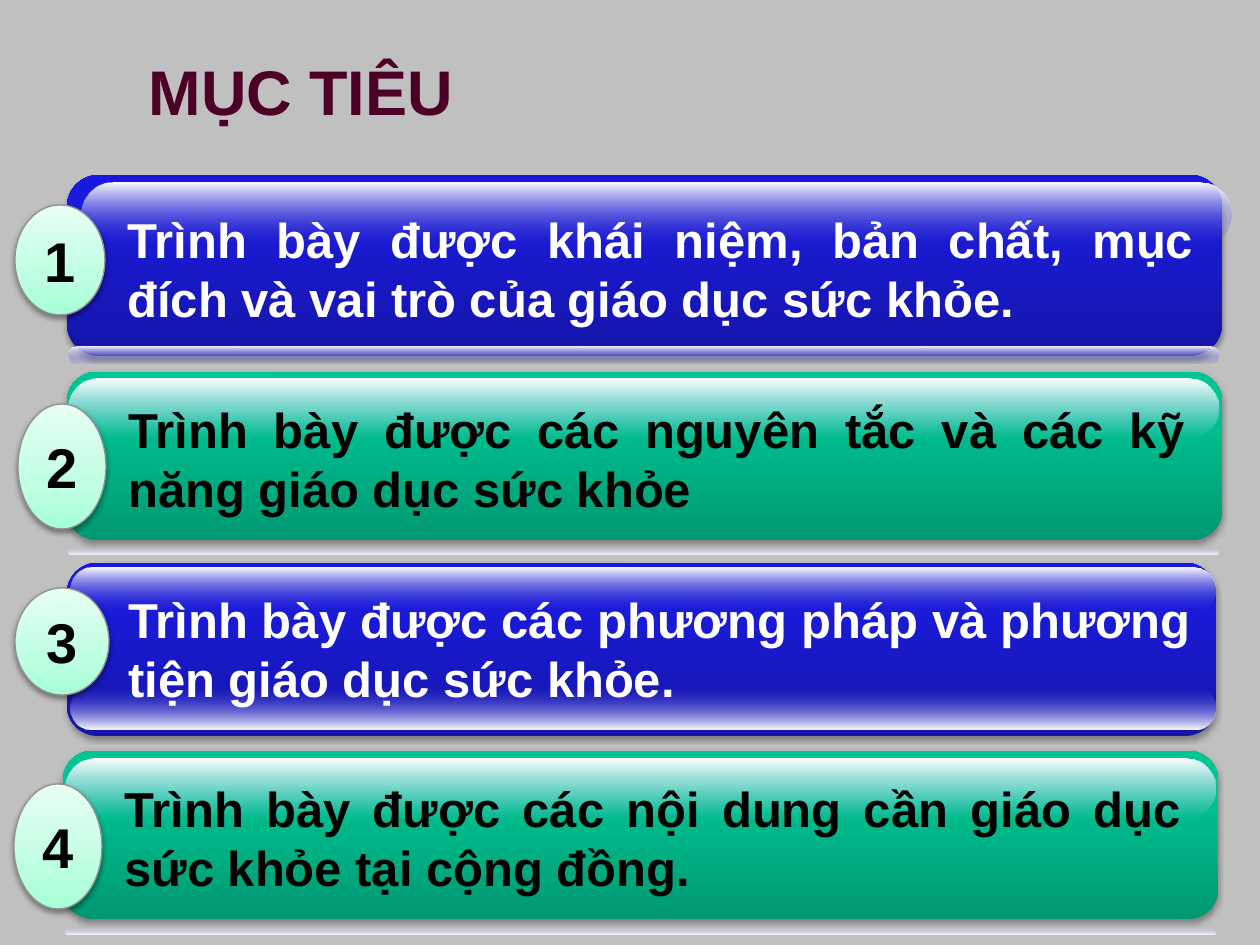
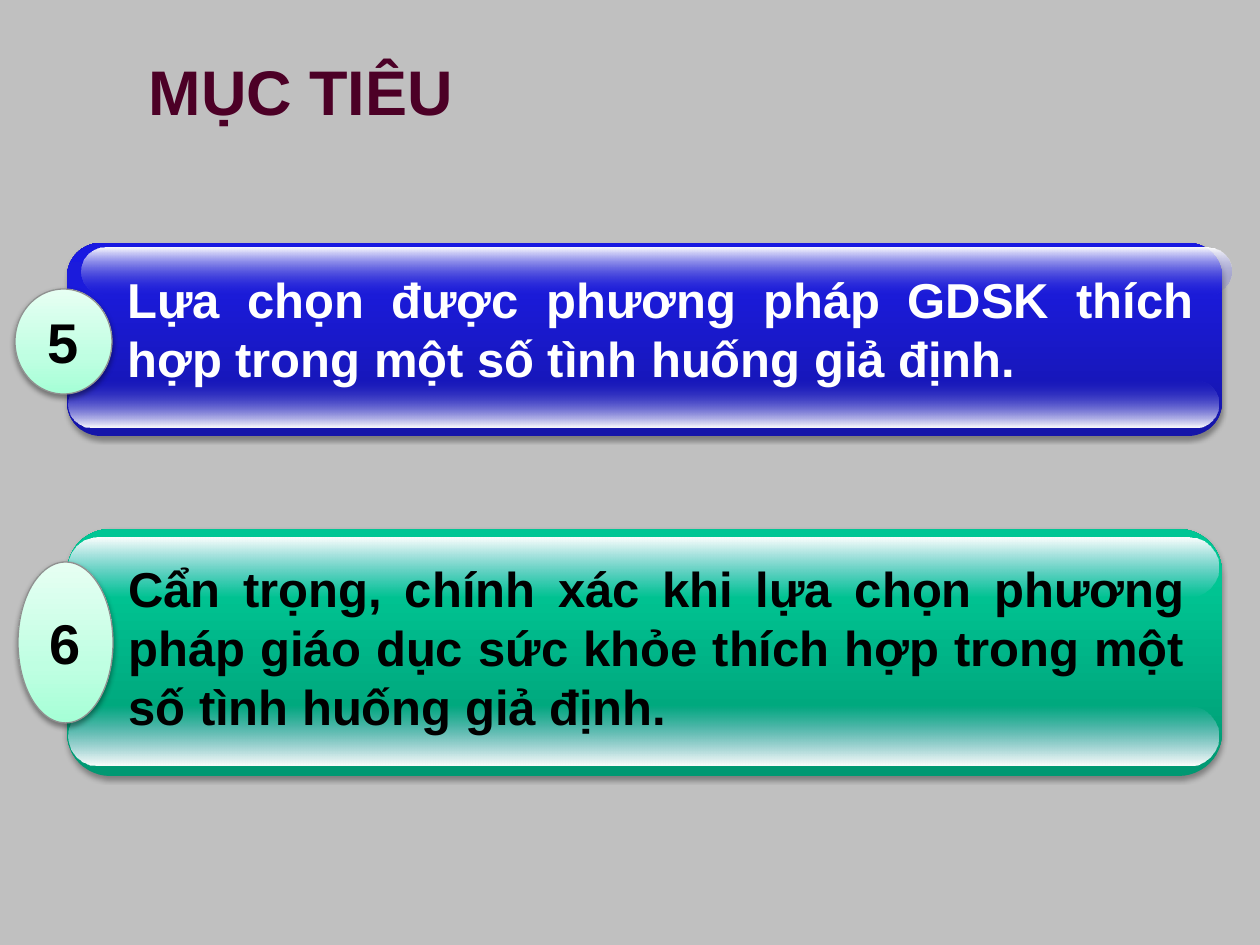
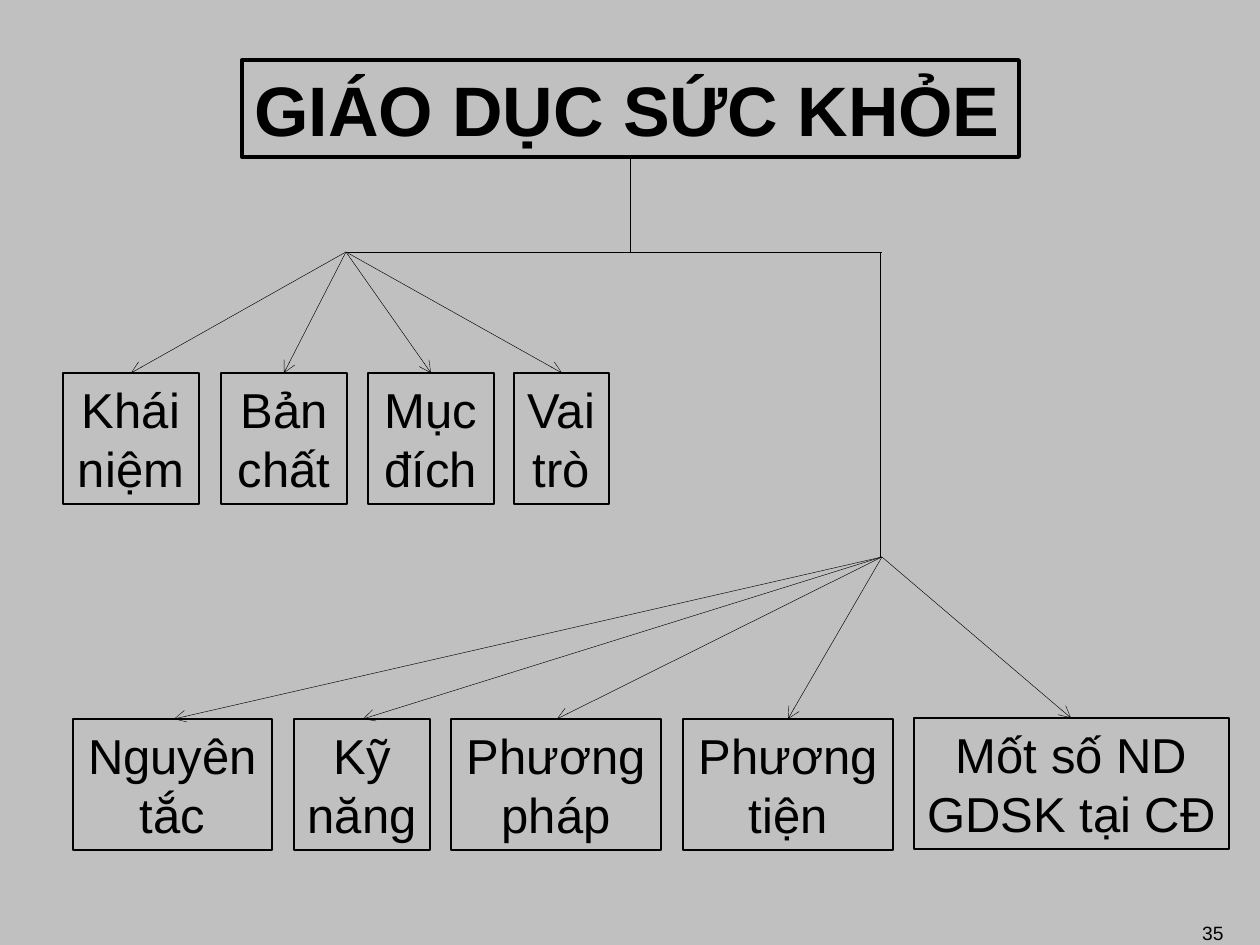
from lxml import etree
from pptx import Presentation
from pptx.dml import color
from pptx.enum import shapes, text
from pptx.oxml import ns

PX = 7257  # EMU in one pixel, 126 pixels to the inch
FONT = "Arial"
BLACK, WHITE, WINE, GRAY = "000000", "FFFFFF", "4C0026", "C0C0C0"
MINT = [(0, "A5FFD6"), (35, "BFFFE2"), (100, "E7FFF3")]
BLUE = [(0, "1515A9"), (80, "1B1BDC"), (100, "1818E1")]
GREEN = [(0, "009872"), (80, "00C694"), (100, "00C795")]
THEMES = [(BLUE, "3333CC", WHITE), (GREEN, "CCCCFF", BLACK)]
KIND, ALIGN = shapes.MSO_SHAPE, text.PP_ALIGN
UP, DOWN = 90, 270  # gradient directions
rgb = color.RGBColor.from_string


def put(home, kind, at, words="", size=28, bold=False, hue=BLACK, align=ALIGN.CENTER):
    """Add a shape without fill or line, with styled text."""
    shape = home.add_shape(kind, *[n * PX for n in at])
    shape.shadow.inherit = False
    shape.fill.background()
    shape.line.fill.background()
    if words:
        frame = shape.text_frame
        frame.text = words
        frame.word_wrap = True
        frame.vertical_anchor = text.MSO_ANCHOR.MIDDLE
        par = frame.paragraphs[0]
        par.alignment = align
        font = par.runs[0].font
        font.name, font.size, font.bold = FONT, size * 12700, bold
        font.color.rgb = rgb(hue)
    return shape


def paint(shape, angle, stops, clear=None, shade=0):
    """Fill with a gradient; the stop at place `clear` is transparent."""
    shape.fill.gradient()
    shape.fill.gradient_angle = angle
    props = shape._element.spPr
    ramp = props.find(".//" + ns.qn("a:gsLst"))
    ramp.clear()
    for spot, hue in stops:
        stop = etree.SubElement(ramp, ns.qn("a:gs"), pos=str(spot * 1000))
        tone = etree.SubElement(stop, ns.qn("a:srgbClr"), val=hue)
        if spot == clear:
            etree.SubElement(tone, ns.qn("a:alpha"), val="0")
    if shade:
        cast = etree.SubElement(props.find(ns.qn("a:effectLst")), ns.qn("a:outerShdw"),
                                blurRad="40000", dist="22000", dir="5400000", rotWithShape="0")
        tone = etree.SubElement(cast, ns.qn("a:srgbClr"), val=BLACK)
        etree.SubElement(tone, ns.qn("a:alpha"), val=str(shade * 1000))


prs = Presentation()
prs.slide_width, prs.slide_height = 1260 * PX, 945 * PX
back = prs.slide_master.background.fill
back.solid()
back.fore_color.rgb = rgb(GRAY)

# Goals: bar, lower gloss, upper gloss, text and disc of each
goals = [
    [
        ("Trình bày được khái niệm, bản chất, mục đích và vai trò của giáo dục sức khỏe.",
         (67, 175, 1155, 181), (69, 347, 1150, 16), (82, 183, 1150, 63),
         (115, 203, 1091, 131), (15, 205, 90, 110)),
        ("Trình bày được các nguyên tắc và các kỹ năng giáo dục sức khỏe",
         (67, 372, 1155, 168), (69, 549, 1150, 6), (69, 379, 1150, 59),
         (116, 393, 1081, 131), (18, 404, 88, 125)),
        ("Trình bày được các phương pháp và phương tiện giáo dục sức khỏe.",
         (67, 563, 1149, 173), (71, 687, 1145, 42), (71, 568, 1145, 42),
         (116, 583, 1087, 131), (15, 588, 94, 107)),
        ("Trình bày được các nội dung cần giáo dục sức khỏe tại cộng đồng.",
         (63, 751, 1155, 168), (66, 929, 1150, 6), (66, 759, 1150, 59),
         (112, 772, 1081, 131), (14, 784, 88, 125)),
    ],
    [
        ("Lựa chọn được phương pháp GDSK thích hợp trong một số tình huống giả định.",
         (67, 243, 1155, 193), (69, 381, 1150, 47), (82, 248, 1150, 47),
         (115, 263, 1091, 131), (15, 289, 97, 105)),
        ("Cẩn trọng, chính xác khi lựa chọn phương pháp giáo dục sức khỏe "
         "thích hợp trong một số tình huống giả định.",
         (67, 529, 1155, 247), (69, 707, 1150, 59), (69, 538, 1150, 59),
         (116, 552, 1081, 190), (18, 562, 95, 161)),
    ],
]
count = 0
for page in goals:
    slide = prs.slides.add_slide(prs.slide_layouts[5])

    # Title
    title = slide.shapes.title
    title.left, title.top, title.width, title.height = [n * PX for n in (136, 27, 966, 126)]
    frame = title.text_frame
    frame.text = "MỤC TIÊU"
    frame.auto_size = text.MSO_AUTO_SIZE.NONE
    frame.vertical_anchor = text.MSO_ANCHOR.MIDDLE
    frame.paragraphs[0].alignment = ALIGN.LEFT
    font = frame.paragraphs[0].runs[0].font
    font.name, font.size, font.bold = FONT, 36 * 12700, True
    font.color.rgb = rgb(WINE)

    # Glossy bars
    for words, bar, low, high, body, disc in page:
        ramp, tint, ink = THEMES[count % 2]
        count += 1
        home = slide.shapes.add_group_shape().shapes
        base = put(home, KIND.ROUNDED_RECTANGLE, bar)
        base.adjustments[0] = 0.175
        paint(base, UP, ramp, shade=35)
        for at, stops, clear in ((low, [(0, tint), (100, WHITE)], 0),
                                 (high, [(0, WHITE), (100, tint)], 100)):
            gloss = put(home, KIND.ROUNDED_RECTANGLE, at)
            gloss.adjustments[0] = 0.5
            paint(gloss, DOWN, stops, clear)
            if count == 1 and at == low:
                gloss._element.spPr.xfrm.set("flipV", "1")
        put(home, KIND.RECTANGLE, body, words, 28, True, ink, ALIGN.JUSTIFY)
        badge = put(home, KIND.OVAL, disc, str(count), 32, True)
        badge.text_frame.word_wrap = False
        paint(badge, UP, MINT, shade=38)
        badge.line.color.rgb = rgb("909090")
        badge.line.width = 9525

# Topic tree
slide = prs.slides.add_slide(prs.slide_layouts[6])
page = put(slide.shapes, KIND.RECTANGLE, (974, 915, 262, 30), "35", 11, align=ALIGN.RIGHT)
page.text_frame.vertical_anchor = text.MSO_ANCHOR.TOP
root = put(slide.shapes, KIND.RECTANGLE, (242, 60, 777, 97), "GIÁO DỤC SỨC KHỎE",
           40, True, align=ALIGN.LEFT)
root.line.color.rgb = rgb(BLACK)
root.line.width = 28575

# Each branch: fork point, then topics with left, top, width and arrow end
branches = [
    ((346, 252), [("Khái niệm", 63, 373, 136, 131), ("Bản chất", 221, 373, 126, 284),
                  ("Mục đích", 368, 373, 126, 431), ("Vai trò", 514, 373, 95, 562)]),
    ((882, 557), [("Nguyên tắc", 73, 719, 199, 174), ("Kỹ năng", 294, 719, 136, 363),
                  ("Phương pháp", 451, 719, 210, 557), ("Phương tiện", 683, 719, 210, 788),
                  ("Mốt số ND GDSK tại CĐ", 914, 718, 315, 1071)]),
]
links = [(630, 157, 630, 252, False), (880, 252, 880, 557, False), (882, 252, 346, 252, False)]
for fork, topics in branches:
    home = slide.shapes.add_group_shape().shapes
    for words, left, top, width, end in topics:
        node = put(home, KIND.RECTANGLE, (left, top, width, 131), words)
        node.line.color.rgb = rgb(BLACK)
        node.line.width = 9525
        links.append((*fork, end, top, True))

# Lines and arrows
for *ends, arrow in links:
    link = slide.shapes.add_connector(shapes.MSO_CONNECTOR.STRAIGHT, *[n * PX for n in ends])
    link.line.color.rgb = rgb(BLACK)
    link.line.width = 3175
    if arrow:
        etree.SubElement(link.line._get_or_add_ln(), ns.qn("a:tailEnd"), type="arrow")
    etree.SubElement(link._element.spPr, ns.qn("a:effectLst"))

prs.save("out.pptx")
